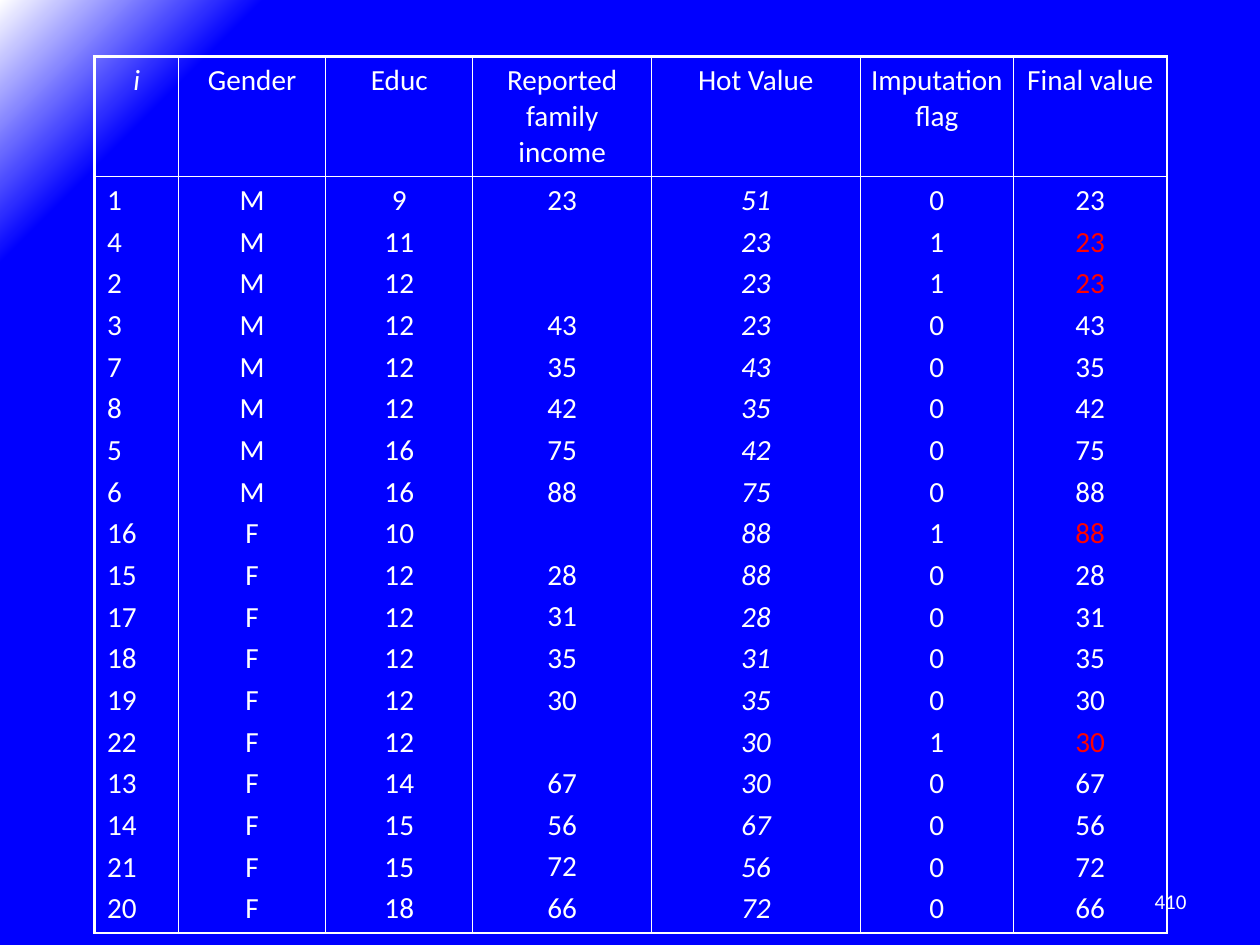
from dataclasses import dataclass
from typing import NamedTuple, Optional

from pptx import Presentation
from pptx.dml.color import RGBColor
from pptx.enum.text import MSO_ANCHOR, PP_ALIGN
from pptx.oxml import parse_xml
from pptx.oxml.ns import nsdecls, qn
from pptx.slide import Slide
from pptx.table import _Cell
from pptx.util import Cm, Pt

WHITE = "FFFFFF"
BLUE = "0000FF"
RED = "FF0000"
FONT = "Calibri"
THIN = 1
THICK = 2.25
PARAGRAPH_GAP = 4.09
LINE_PITCH = 28.5
INITIAL_HOT_VALUE = 51


class Respondent(NamedTuple):
    number: int
    gender: str
    educ: int
    income: Optional[int]


class Entry(NamedTuple):
    text: str
    color: str = WHITE


@dataclass
class Column:
    heading: str
    width: float
    entries: list[Entry]
    align: PP_ALIGN = PP_ALIGN.CENTER
    italic_heading: bool = False
    italic_entries: bool = False
    heading_inset: float = 0.3


RESPONDENTS = [
    Respondent(1, "M", 9, 23),
    Respondent(4, "M", 11, None),
    Respondent(2, "M", 12, None),
    Respondent(3, "M", 12, 43),
    Respondent(7, "M", 12, 35),
    Respondent(8, "M", 12, 42),
    Respondent(5, "M", 16, 75),
    Respondent(6, "M", 16, 88),
    Respondent(16, "F", 10, None),
    Respondent(15, "F", 12, 28),
    Respondent(17, "F", 12, 31),
    Respondent(18, "F", 12, 35),
    Respondent(19, "F", 12, 30),
    Respondent(22, "F", 12, None),
    Respondent(13, "F", 14, 67),
    Respondent(14, "F", 15, 56),
    Respondent(21, "F", 15, 72),
    Respondent(20, "F", 18, 66),
]


def rgb(color: str) -> RGBColor:
    return RGBColor.from_string(color)


def impute(respondents: list[Respondent]) -> list[Column]:
    numbers, genders, educs, incomes, hots, flags, finals = ([] for _ in range(7))
    hot = INITIAL_HOT_VALUE
    for person in respondents:
        missing = person.income is None
        final = hot if missing else person.income
        numbers.append(Entry(str(person.number)))
        genders.append(Entry(person.gender))
        educs.append(Entry(str(person.educ)))
        incomes.append(Entry("" if missing else str(person.income)))
        hots.append(Entry(str(hot)))
        flags.append(Entry("1" if missing else "0"))
        finals.append(Entry(str(final), RED if missing else WHITE))
        hot = final
    return [
        Column("i", 2.03, numbers, align=PP_ALIGN.LEFT, italic_heading=True),
        Column("Gender", 3.56, genders),
        Column("Educ", 3.56, educs),
        Column("Reported family income", 4.32, incomes),
        Column("Hot Value", 5.05, hots, italic_entries=True),
        Column("Imputation flag", 3.71, flags, heading_inset=0.15),
        Column("Final value", 3.71, finals),
    ]


def paint_background(slide: Slide) -> None:
    slide.background.fill.gradient()
    placeholder_fill = slide._element.find(".//" + qn("a:gradFill"))
    stops = "".join(
        f'<a:gs pos="{position * 1000}"><a:srgbClr val="{color}"/></a:gs>'
        for position, color in ((0, BLUE), (88, BLUE), (100, WHITE))
    )
    corner_glow = parse_xml(
        f'<a:gradFill rotWithShape="1" {nsdecls("a")}><a:gsLst>{stops}</a:gsLst>'
        '<a:path path="circle"><a:fillToRect l="100000" t="100000"/></a:path>'
        "</a:gradFill>"
    )
    placeholder_fill.getparent().replace(placeholder_fill, corner_glow)


def set_borders(cell: _Cell, left: float, right: float, top: float, bottom: float) -> None:
    properties = cell._tc.get_or_add_tcPr()
    for index, (side, width) in enumerate(zip("LRTB", (left, right, top, bottom))):
        border = parse_xml(
            f'<a:ln{side} w="{Pt(width)}" {nsdecls("a")}><a:solidFill>'
            f'<a:srgbClr val="{WHITE}"/></a:solidFill></a:ln{side}>'
        )
        properties.insert(index, border)


def fill_cell(cell: _Cell, entries: list[Entry], align: PP_ALIGN, italic: bool, inset: float) -> None:
    cell.fill.background()
    cell.margin_left = cell.margin_right = Cm(inset)
    cell.margin_top = cell.margin_bottom = Cm(0.15)
    shown = [(line, entry) for line, entry in enumerate(entries) if entry.text]
    cell.text_frame.text = "\n".join(entry.text for _, entry in shown)
    previous_line = -1
    for paragraph, (line, entry) in zip(cell.text_frame.paragraphs, shown):
        skipped = line - previous_line - 1
        paragraph.space_before = Pt(PARAGRAPH_GAP + LINE_PITCH * skipped)
        paragraph.alignment = align
        previous_line = line
        for run in paragraph.runs:
            run.font.name = FONT
            run.font.size = Pt(20)
            run.font.italic = italic
            run.font.color.rgb = rgb(entry.color)


def add_imputation_table(slide: Slide, columns: list[Column]) -> None:
    width = sum(column.width for column in columns)
    frame = slide.shapes.add_table(2, len(columns), Cm(2.29), Cm(1.37), Cm(width), Cm(21.16))
    table = frame.table
    table.first_row = False
    table.horz_banding = False
    table.rows[0].height = Cm(2.9)
    table.rows[1].height = Cm(18.26)
    for index, column in enumerate(columns):
        table.columns[index].width = Cm(column.width)
        heading, body = table.cell(0, index), table.cell(1, index)
        fill_cell(heading, [Entry(column.heading)], PP_ALIGN.CENTER,
                  column.italic_heading, column.heading_inset)
        fill_cell(body, column.entries, column.align, column.italic_entries, 0.3)
        left = THICK if index == 0 else THIN
        right = THICK if index == len(columns) - 1 else THIN
        set_borders(heading, left, right, THICK, THIN)
        set_borders(body, left, right, THIN, THICK)


def add_page_number(slide: Slide, number: str) -> None:
    page = slide.shapes.add_textbox(Cm(21.84), Cm(21.18), Cm(7.11), Cm(1.22)).text_frame
    page.word_wrap = True
    page.vertical_anchor = MSO_ANCHOR.MIDDLE
    page.text = number
    page.paragraphs[0].alignment = PP_ALIGN.RIGHT
    font = page.paragraphs[0].runs[0].font
    font.name = FONT
    font.size = Pt(14.4)
    font.color.rgb = rgb(WHITE)


def main() -> None:
    deck = Presentation()
    deck.slide_width = Cm(30.48)
    deck.slide_height = Cm(22.86)
    slide = deck.slides.add_slide(deck.slide_layouts[6])
    paint_background(slide)
    add_imputation_table(slide, impute(RESPONDENTS))
    add_page_number(slide, "410")
    deck.save("out.pptx")


if __name__ == "__main__":
    main()
